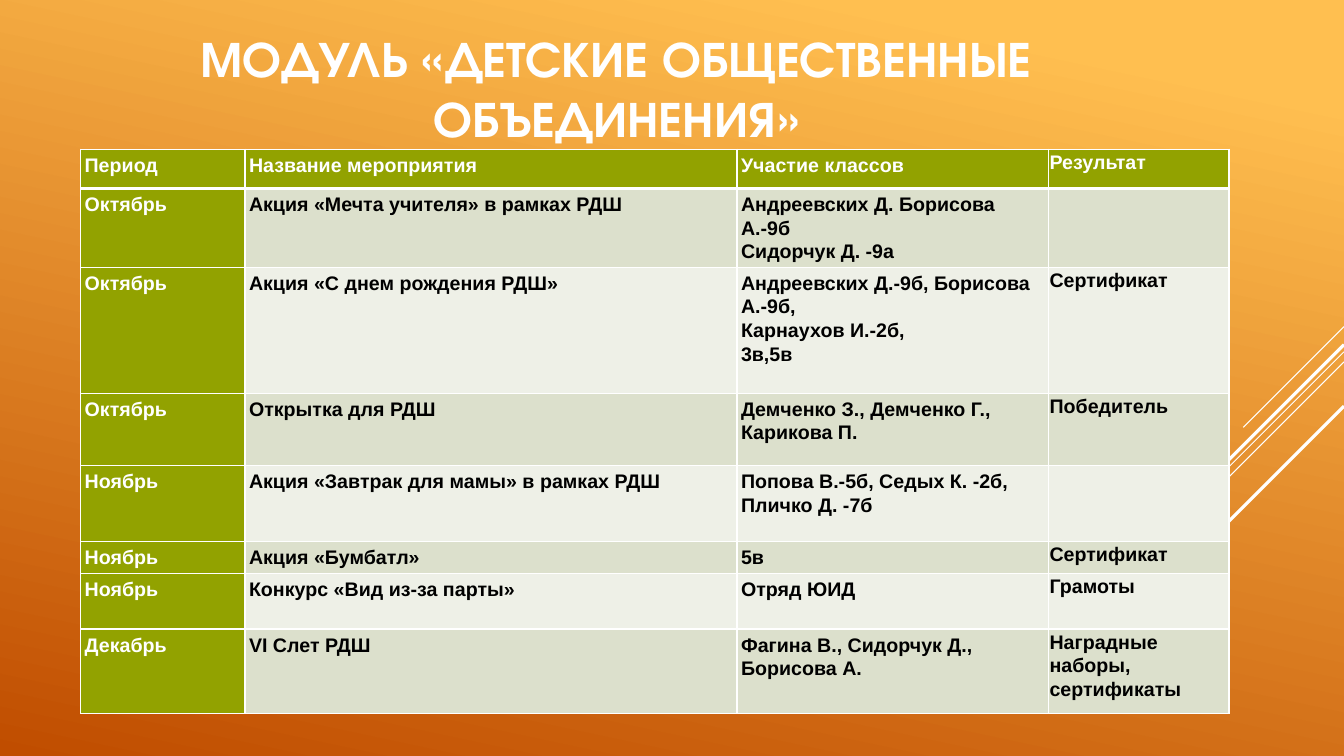
from dataclasses import dataclass

import lxml.etree
import pptx
import pptx.dml.color
import pptx.enum.shapes
import pptx.enum.text
import pptx.oxml.ns
import pptx.util

Inches = pptx.util.Inches
Pt = pptx.util.Pt
RGBColor = pptx.dml.color.RGBColor
qn = pptx.oxml.ns.qn

WHITE = RGBColor(0xFF, 0xFF, 0xFF)
BLACK = RGBColor(0x00, 0x00, 0x00)
AMBER = RGBColor(0xFF, 0xBF, 0x50)
RUST = RGBColor(0xC0, 0x4D, 0x00)
OLIVE = RGBColor(0x92, 0xA2, 0x00)
BAND_DARK = RGBColor(0xDC, 0xE0, 0xCC)
BAND_LIGHT = RGBColor(0xEE, 0xF0, 0xE7)

SLIDE_WIDTH = 13.33
COLUMN_WIDTHS = (1.63, 4.88, 3.09, 1.79)


@dataclass(frozen=True)
class Stripe:
    top: float
    length: float
    weight: float


@dataclass(frozen=True)
class Row:
    height: float
    period: str
    event: str
    classes: str
    result: str = ""

    def texts(self) -> tuple[str, ...]:
        return self.period, self.event, self.classes, self.result


STRIPES = (
    Stripe(3.24, 1.0, 0.75),
    Stripe(3.49, 3.26, 0.75),
    Stripe(3.59, 2.07, 0.75),
    Stripe(3.42, 1.91, 2.25),
    Stripe(4.03, 1.39, 2.25),
)

ROWS = (
    Row(0.39, "Период", "Название мероприятия", "Участие классов", "Результат"),
    Row(0.78, "Октябрь", "Акция «Мечта учителя» в рамках РДШ",
        "Андреевских Д. Борисова А.-9б\nСидорчук Д. -9а"),
    Row(1.25, "Октябрь", "Акция «С днем рождения РДШ»",
        "Андреевских Д.-9б, Борисова А.-9б,\nКарнаухов И.-2б,\n3в,5в", "Сертификат"),
    Row(0.72, "Октябрь", "Открытка для РДШ",
        "Демченко З., Демченко Г., Карикова П.", "Победитель"),
    Row(0.75, "Ноябрь", "Акция «Завтрак для мамы» в рамках РДШ",
        "Попова В.-5б, Седых К. -2б,\nПличко Д. -7б"),
    Row(0.32, "Ноябрь", "Акция «Бумбатл»", "5в", "Сертификат"),
    Row(0.55, "Ноябрь", "Конкурс «Вид из-за парты»", "Отряд ЮИД", "Грамоты"),
    Row(0.84, "Декабрь", "VI Слет РДШ", "Фагина В., Сидорчук Д., Борисова А.",
        "Наградные наборы, сертификаты"),
)


def paint_background(slide) -> None:
    fill = slide.background.fill
    fill.gradient()
    fill.gradient_angle = 258
    for stop, position, color in zip(fill.gradient_stops, (0.1, 1), (AMBER, RUST)):
        stop.position = position
        stop.color.rgb = color


def add_stripe(slide, stripe: Stripe) -> None:
    sp = slide.shapes.add_connector(
        pptx.enum.shapes.MSO_CONNECTOR.STRAIGHT,
        Inches(SLIDE_WIDTH), Inches(stripe.top),
        Inches(SLIDE_WIDTH - stripe.length), Inches(stripe.top + stripe.length))
    sp.line.color.rgb = WHITE
    sp.line.width = Pt(stripe.weight)
    lxml.etree.SubElement(sp._element.spPr, qn("a:effectLst"))


def format_title(slide, text: str) -> None:
    sp = slide.shapes.title
    sp.left, sp.top, sp.width, sp.height = map(Inches, (1.45, 0.04, 9.33, 1.65))
    tf = sp.text_frame
    tf.text = text
    tf.word_wrap = True
    tf.vertical_anchor = pptx.enum.text.MSO_ANCHOR.MIDDLE
    p = tf.paragraphs[0]
    p.alignment = pptx.enum.text.PP_ALIGN.CENTER
    p.line_spacing = 1.0
    p.font.name = "TeX Gyre Adventor"
    p.font.size = Pt(36)
    p.font.bold = True
    p.font.color.rgb = WHITE


def add_borders(cell, top: float, bottom: float) -> None:
    tc_pr = cell._tc.get_or_add_tcPr()
    for side, weight in (("L", 1), ("R", 1), ("T", top), ("B", bottom)):
        ln = lxml.etree.SubElement(tc_pr, qn(f"a:ln{side}"), w=str(Pt(weight)))
        solid = lxml.etree.SubElement(ln, qn("a:solidFill"))
        lxml.etree.SubElement(solid, qn("a:srgbClr"), val=str(WHITE))


def fill_cell(cell, text: str, row: int, column: int) -> None:
    add_borders(cell, 3 if row == 1 else 1, 3 if row == 0 else 1)
    accent = row == 0 or column == 0
    cell.fill.solid()
    cell.fill.fore_color.rgb = OLIVE if accent else (BAND_DARK if row % 2 else BAND_LIGHT)
    margin = Inches(0.01 if column == 3 else 0.04)
    cell.margin_left = cell.margin_right = margin
    cell.margin_top = cell.margin_bottom = margin
    cell.text = text
    for p in cell.text_frame.paragraphs:
        p.line_spacing = 1.07
        p.font.name = "Arial"
        p.font.size = Pt(14)
        p.font.bold = True
        p.font.color.rgb = WHITE if accent else BLACK


def add_event_table(slide) -> None:
    table = slide.shapes.add_table(
        len(ROWS), len(COLUMN_WIDTHS), Inches(0.8), Inches(1.48),
        Inches(sum(COLUMN_WIDTHS)), Inches(sum(row.height for row in ROWS))).table
    for column, width in zip(table.columns, COLUMN_WIDTHS):
        column.width = Inches(width)
    for i, row in enumerate(ROWS):
        table.rows[i].height = Inches(row.height)
        for j, text in enumerate(row.texts()):
            fill_cell(table.cell(i, j), text, i, j)


def main() -> None:
    prs = pptx.Presentation()
    prs.slide_width = Inches(SLIDE_WIDTH)
    prs.slide_height = Inches(7.5)
    slide = prs.slides.add_slide(prs.slide_layouts[5])
    paint_background(slide)
    for stripe in STRIPES:
        add_stripe(slide, stripe)
    format_title(slide, "МОДУЛЬ «ДЕТСКИЕ ОБЩЕСТВЕННЫЕ ОБЪЕДИНЕНИЯ»")
    add_event_table(slide)
    prs.save("out.pptx")


if __name__ == "__main__":
    main()
